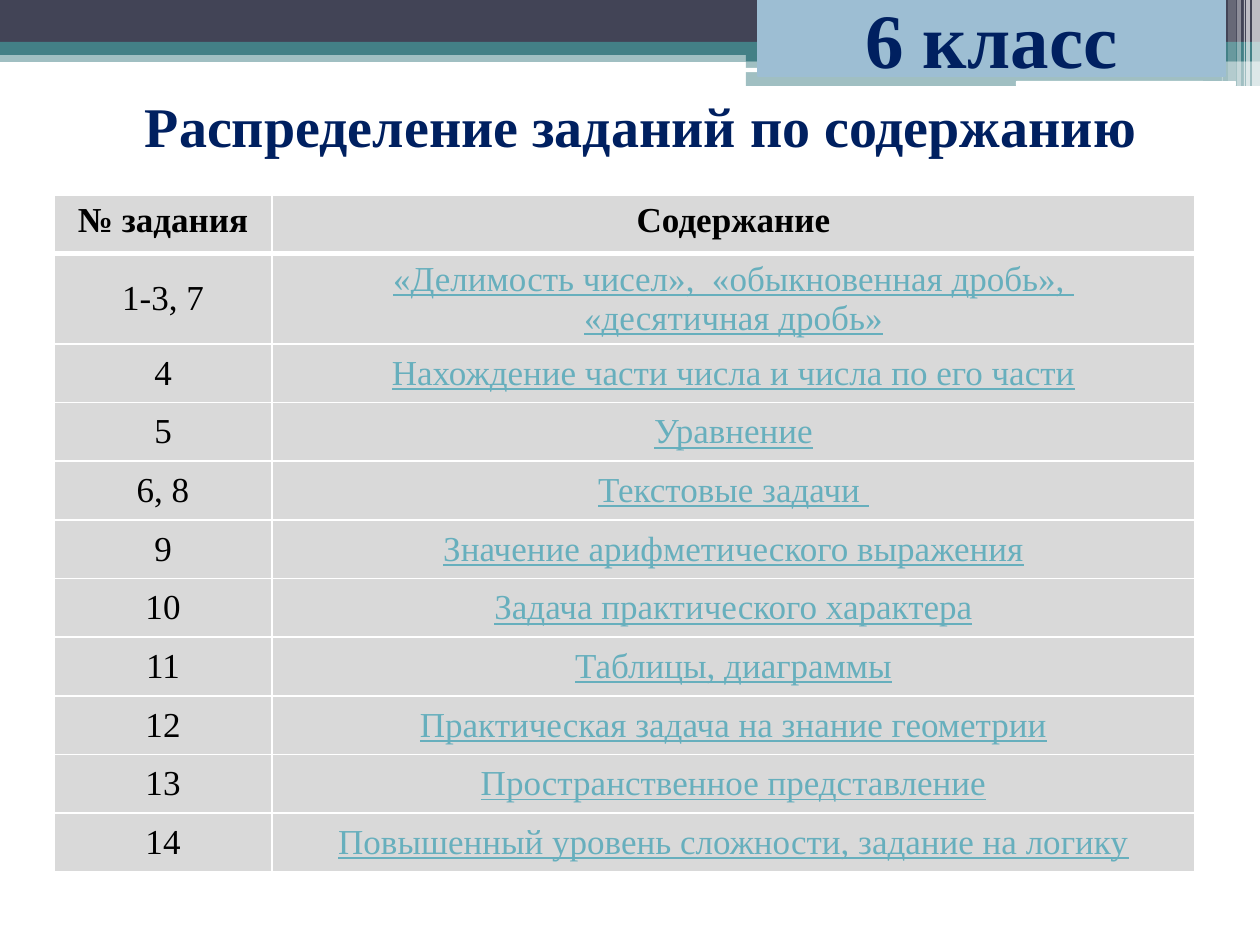
from lxml import etree
from pptx import Presentation
from pptx import util as u
from pptx.dml.color import RGBColor
from pptx.enum import shapes, text
from pptx.oxml.ns import qn

COLORS = {"navy": "002060", "slate": "424456", "teal": "438086", "white": "FFFFFF",
          "label": "9DBED3", "cell": "D9D9D9", "link": "67AFBD", "black": "000000"}
FONT = "Times New Roman"
TITLE = "Распределение заданий по содержанию"
GRADE = "6 класс"
HEADER = ("№ задания", "Содержание")
TASKS = [
    ("1-3, 7", "«Делимость чисел»,  «обыкновенная дробь», \n«десятичная дробь»"),
    ("4", "Нахождение части числа и числа по его части"),
    ("5", "Уравнение"),
    ("6, 8", "Текстовые задачи "),
    ("9", "Значение арифметического выражения"),
    ("10", "Задача практического характера"),
    ("11", "Таблицы, диаграммы"),
    ("12", "Практическая задача на знание геометрии"),
    ("13", "Пространственное представление"),
    ("14", "Повышенный уровень сложности, задание на логику"),
]
BANDS = [
    (0, 50, 1260, 12, "teal", 50),
    (0, 0, 1260, 43, "slate", 100),
    (0, 42, 1260, 13, "teal", 100),
    (746, 49, 514, 12, "teal", 100),
    (746, 61, 514, 25, "teal", 50),
]
GAPS = [(745, 68, 422, 4), (1016, 81, 220, 5)]
STRIPES = [(1252, 8, 86, 65), (1246, 4, 86, 65), (1244, 1, 86, 60),
           (1237, 4, 86, 40), (1228, 8, 81, 20), (1222, 1, 81, 30)]
TITLE_BOX = (74, 86, 1134, 79)
GRADE_BOX = (758, 0, 467, 76)
TABLE_BOX = (54, 195, 1141, 645)
COLS = (218, 923)


def px(n):
    return u.Emu(round(n * 914400 / 126))


def rgb(name):
    return RGBColor.from_string(COLORS[name])


def add_block(slide, box, color, alpha=100, kind=shapes.MSO_SHAPE.RECTANGLE):
    sp = slide.shapes.add_shape(kind, *map(px, box))
    sp.shadow.inherit = False
    sp.fill.solid()
    sp.fill.fore_color.rgb = rgb(color)
    sp.line.fill.background()
    if alpha < 100:
        clr = sp.fill._xPr.find(qn("a:solidFill"))[0]
        etree.SubElement(clr, qn("a:alpha"), val=str(alpha * 1000))
    return sp


def write(tf, words, size, color, bold=False, underline=None):
    tf.text = words
    tf.word_wrap = True
    for p in tf.paragraphs:
        p.alignment = text.PP_ALIGN.CENTER
        f = p.font
        f.name, f.size, f.bold, f.underline = FONT, u.Pt(size), bold, underline
        f.color.rgb = rgb(color)


def add_borders(cell, top, bottom):
    tc_pr = cell._tc.get_or_add_tcPr()
    for side, width in (("L", 1), ("R", 1), ("T", top), ("B", bottom)):
        ln = etree.SubElement(tc_pr, qn(f"a:ln{side}"), w=str(u.Pt(width)))
        fill = etree.SubElement(ln, qn("a:solidFill"))
        etree.SubElement(fill, qn("a:srgbClr"), val=COLORS["white"])


def add_task_table(slide):
    rows = [HEADER] + TASKS
    table = slide.shapes.add_table(len(rows), len(COLS), *map(px, TABLE_BOX)).table
    table.first_row = table.horz_banding = False
    for column, width in zip(table.columns, COLS):
        column.width = px(width)
    for i, row in enumerate(rows):
        table.rows[i].height = px(TABLE_BOX[3] / len(rows))
        for j, words in enumerate(row):
            cell = table.cell(i, j)
            is_link = i > 0 and j == 1
            write(cell.text_frame, words, 20, "link" if is_link else "black",
                  bold=i == 0, underline=is_link)
            cell.vertical_anchor = text.MSO_ANCHOR.MIDDLE if i else text.MSO_ANCHOR.TOP
            add_borders(cell, 3 if i == 1 else 1, 3 if i == 0 else 1)
            cell.fill.solid()
            cell.fill.fore_color.rgb = rgb("cell")


def main():
    prs = Presentation()
    prs.slide_width, prs.slide_height = px(1260), px(945)
    slide = prs.slides.add_slide(prs.slide_layouts[5])

    for *box, color, alpha in BANDS:
        add_block(slide, box, color, alpha)
    for box in GAPS:
        add_block(slide, box, "white", kind=shapes.MSO_SHAPE.ROUNDED_RECTANGLE)
    for left, width, height, alpha in STRIPES:
        add_block(slide, (left, 0, width, height), "white", alpha)

    title = slide.shapes.title
    title.left, title.top, title.width, title.height = map(px, TITLE_BOX)
    write(title.text_frame, TITLE, 32, "navy", bold=True)
    title.text_frame.vertical_anchor = text.MSO_ANCHOR.MIDDLE

    label = add_block(slide, GRADE_BOX, "label")
    label.line.color.rgb = rgb("label")
    label.line.width = u.Pt(1.5)
    write(label.text_frame, GRADE, 44, "navy", bold=True)
    label.text_frame.vertical_anchor = text.MSO_ANCHOR.MIDDLE

    add_task_table(slide)
    prs.save("out.pptx")


if __name__ == "__main__":
    main()
